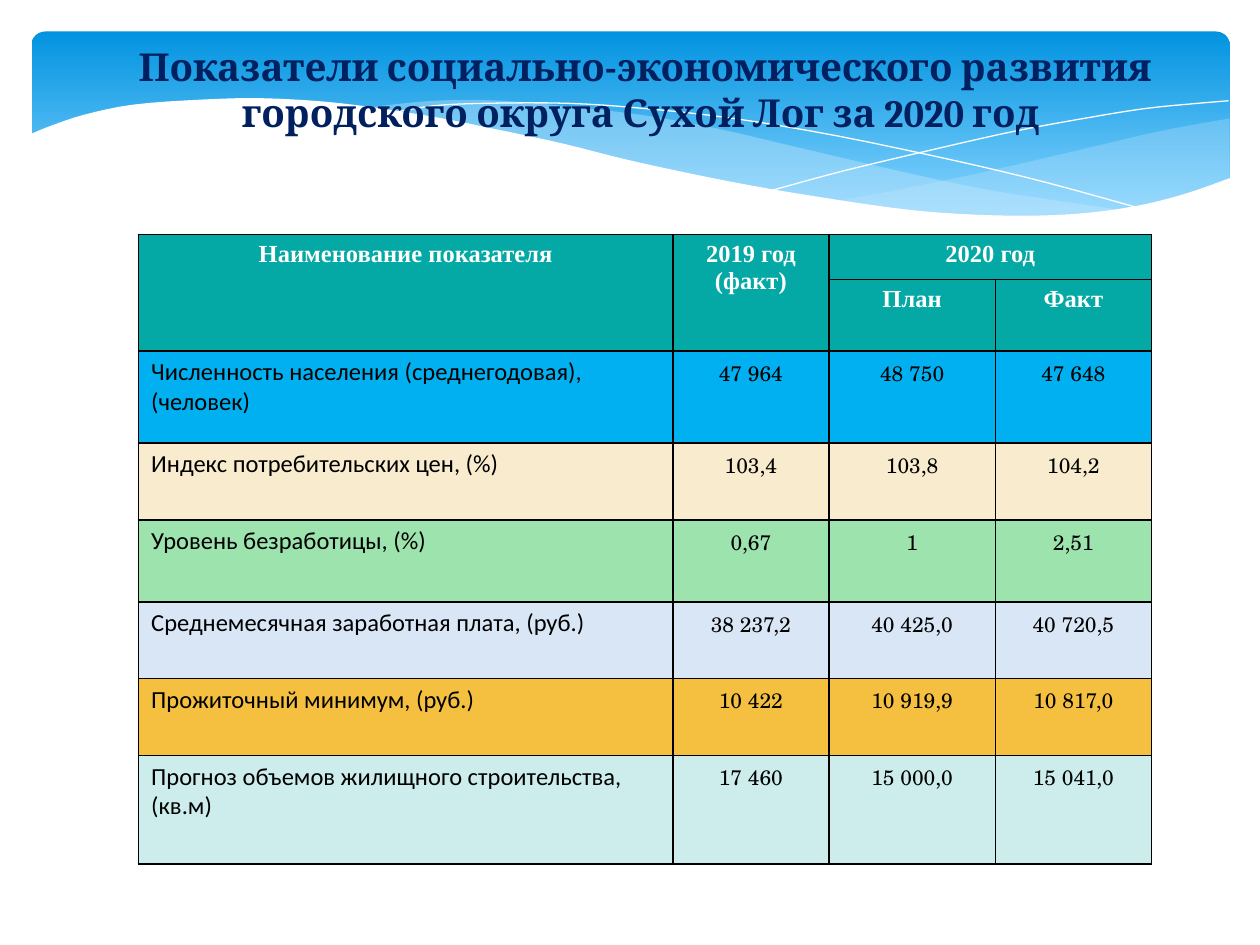
from dataclasses import dataclass
from typing import Optional

from lxml.etree import SubElement
from pptx import Presentation
from pptx.dml.color import RGBColor
from pptx.enum.shapes import MSO_SHAPE as Kind
from pptx.enum.text import MSO_ANCHOR as Anchor, MSO_AUTO_SIZE as Auto, PP_ALIGN as Align
from pptx.oxml import parse_xml
from pptx.oxml.ns import qn
from pptx.util import Inches, Pt

WIDE, HIGH = Inches(10), Inches(7.5)
UNIT = WIDE // 1000  # the slide is a grid of 1000 columns by 750 rows
NS = "http://schemas.openxmlformats.org/drawingml/2006/main"

COLORS = {
    "deep": "0293E0", "light": "83D3FE", "mist": "C6E7FC", "white": "FFFFFF",
    "black": "000000", "navy": "002060", "teal": "04A8A4", "sky": "00B0F0",
    "ochre": "DC9F0C", "mint": "9DE3AE", "blue": "4584D3", "gold": "F5C040",
}

Curve = list[tuple[float, float]]


@dataclass
class Wave:
    """Smooth curves joined end to end; without a fill it is an open line."""
    curves: list[Curve]
    fill: Optional[str] = None
    alpha: int = 100


@dataclass
class Style:
    font: str
    size: int
    color: str
    bold: bool = False


@dataclass
class Row:
    name: str
    values: tuple[str, str, str]
    high: int
    fill: str
    alpha: int = 100


TITLE = Style("Cambria", 22, "navy", True)
HEAD = Style("Times New Roman", 14, "white", True)
NAME = Style("Calibri", 14, "black")
VALUE = Style("TeX Gyre Schola", 12, "black")

WAVES = [
    Wave([[(976, 94), (921, 104), (861, 118), (779, 137), (706, 152), (661, 160)],
          [(661, 160), (719, 167), (769, 171), (814, 172), (854, 170), (889, 166),
           (921, 160), (949, 152), (976, 141)]], "mist", 29),
    Wave([[(893, 167), (837, 159), (775, 149), (706, 134), (629, 116), (569, 102),
           (514, 92), (465, 86), (399, 80), (344, 80), (286, 86)],
          [(286, 86), (342, 94), (404, 106), (449, 116), (530, 135), (601, 150),
           (665, 161), (722, 168), (773, 172), (818, 173), (857, 171), (893, 167)]],
         "mist", 40),
    Wave([[(309, 90), (344, 84), (387, 82), (450, 82), (510, 86), (582, 94),
           (665, 108), (760, 128), (831, 145), (907, 166)]]),
    Wave([[(613, 151), (672, 135), (748, 117), (806, 104), (866, 93), (910, 86),
           (951, 82), (975, 80)]]),
    Wave([[(977, 141), (940, 154), (899, 164), (850, 170), (793, 171), (726, 167),
           (648, 156), (579, 144), (503, 128), (447, 114), (391, 102), (340, 92),
           (271, 82), (211, 78), (161, 79), (106, 83), (67, 91), (40, 100), (23, 107)],
          [(23, 224)], [(977, 224)]], "white"),
]

COLS = (424, 124, 132, 124)
HEADS = (36, 51)
ROWS = [
    Row("Численность населения (среднегодовая), (человек)",
        ("47 964", "48 750", "47 648"), 73, "sky"),
    Row("Индекс потребительских цен, (%)", ("103,4", "103,8", "104,2"), 61, "ochre", 20),
    Row("Уровень безработицы, (%)", ("0,67", "1", "2,51"), 65, "mint"),
    Row("Среднемесячная заработная плата, (руб.)",
        ("38 237,2", "40 425,0", "40 720,5"), 61, "blue", 20),
    Row("Прожиточный минимум, (руб.)", ("10 422", "10 919,9", "10 817,0"), 61, "gold"),
    Row("Прогноз объемов жилищного строительства, (кв.м)",
        ("17 460", "15 000,0", "15 041,0"), 86, "teal", 20),
]


def rgb(name: str) -> RGBColor:
    return RGBColor.from_string(COLORS[name])


def grid(*spans: float) -> list[int]:
    return [round(span * UNIT) for span in spans]


def paint(fill, color: str, alpha: int, node) -> None:
    """Fill solid; node is the properties element that holds the fill."""
    fill.solid()
    fill.fore_color.rgb = rgb(color)
    if alpha < 100:
        tone = node.find(qn("a:solidFill"))[0]
        SubElement(tone, qn("a:alpha"), val=str(alpha * 1000))


def smooth(curve: Curve, steps: int = 4) -> Curve:
    """Return points of a Catmull-Rom spline through the curve."""
    ends = [curve[0], *curve, curve[-1]]
    out = [curve[0]]
    for a, b, c, d in zip(ends, ends[1:], ends[2:], ends[3:]):
        for step in range(1, steps + 1):
            t = step / steps
            out.append(tuple(
                (2 * q + (r - p) * t + (2 * p - 5 * q + 4 * r - s) * t ** 2
                 + (3 * q - p - 3 * r + s) * t ** 3) / 2
                for p, q, r, s in zip(a, b, c, d)))
    return out


def draw_wave(shapes, wave: Wave) -> None:
    dots = [grid(*dot) for curve in wave.curves for dot in smooth(curve)]
    path = shapes.build_freeform(*dots[0])
    path.add_line_segments(dots[1:], close=wave.fill is not None)
    shape = path.convert_to_shape()
    shape.shadow.inherit = False
    if wave.fill:
        paint(shape.fill, wave.fill, wave.alpha, shape.element.spPr)
        shape.line.fill.background()
    else:
        shape.fill.background()
        shape.line.color.rgb = rgb("white")
        shape.line.width = 0


def draw_band(shapes) -> None:
    band = shapes.add_shape(Kind.ROUNDED_RECTANGLE, *grid(25, 25, 951, 156))
    band.adjustments[0] = 0.07
    band.shadow.inherit = False
    band.line.fill.background()
    band.fill.gradient()
    band.fill.gradient_angle = 270
    for stop, color, place in zip(band.fill.gradient_stops, ("deep", "light"), (0, 0.9)):
        stop.color.rgb = rgb(color)
        stop.position = place


def write(frame, text: str, style: Style, align: Align) -> None:
    para = frame.paragraphs[0]
    para.alignment = align
    run = para.add_run()
    run.text = text
    font = run.font
    font.name, font.size, font.bold = style.font, Pt(style.size), style.bold
    font.color.rgb = rgb(style.color)


def draw_title(title) -> None:
    title.left, title.top, title.width, title.height = grid(67, 29, 890, 84)
    frame = title.text_frame
    frame.word_wrap = True
    frame.auto_size = Auto.SHAPE_TO_FIT_TEXT
    frame.vertical_anchor = Anchor.TOP
    write(frame, "Показатели социально-экономического развития "
          "городского округа Сухой Лог за 2020 год ", TITLE, Align.CENTER)
    title.element.getparent().append(title.element)  # bring to front


def dress(cell, color: str, alpha: int = 100) -> None:
    """Give the cell its borders and fill."""
    props = cell._tc.get_or_add_tcPr()
    for side in ("lnL", "lnR", "lnT", "lnB"):
        props.append(parse_xml(
            f'<a:{side} xmlns:a="{NS}" w="12700"><a:solidFill>'
            f'<a:srgbClr val="{COLORS["black"]}"/></a:solidFill></a:{side}>'))
    paint(cell.fill, color, alpha, props)


def draw_table(shapes) -> None:
    highs = [*HEADS, *(row.high for row in ROWS)]
    table = shapes.add_table(len(highs), len(COLS),
                             *grid(110, 186, sum(COLS), sum(highs))).table
    table.first_row = table.horz_banding = False
    for col, wide in zip(table.columns, grid(*COLS)):
        col.width = wide
    for line, high in zip(table.rows, grid(*highs)):
        line.height = high

    for r in range(len(HEADS)):
        for c in range(len(COLS)):
            dress(table.cell(r, c), "teal")
    for start, end in (((0, 0), (1, 0)), ((0, 1), (1, 1)), ((0, 2), (0, 3))):
        table.cell(*start).merge(table.cell(*end))
    heads = {(0, 0): "Наименование показателя", (0, 1): "2019 год (факт)",
             (0, 2): "2020 год", (1, 2): "План", (1, 3): "Факт"}
    for spot, text in heads.items():
        write(table.cell(*spot).text_frame, text, HEAD, Align.CENTER)

    for r, row in enumerate(ROWS, len(HEADS)):
        for c, text in enumerate((row.name, *row.values)):
            cell = table.cell(r, c)
            dress(cell, row.fill, row.alpha)
            style, align = (VALUE, Align.CENTER) if c else (NAME, Align.LEFT)
            write(cell.text_frame, text, style, align)


def main() -> None:
    deck = Presentation()
    deck.slide_width, deck.slide_height = WIDE, HIGH
    shapes = deck.slides.add_slide(deck.slide_layouts[5]).shapes
    draw_band(shapes)
    for wave in WAVES:
        draw_wave(shapes, wave)
    draw_title(shapes.title)
    draw_table(shapes)
    deck.save("out.pptx")


if __name__ == "__main__":
    main()
